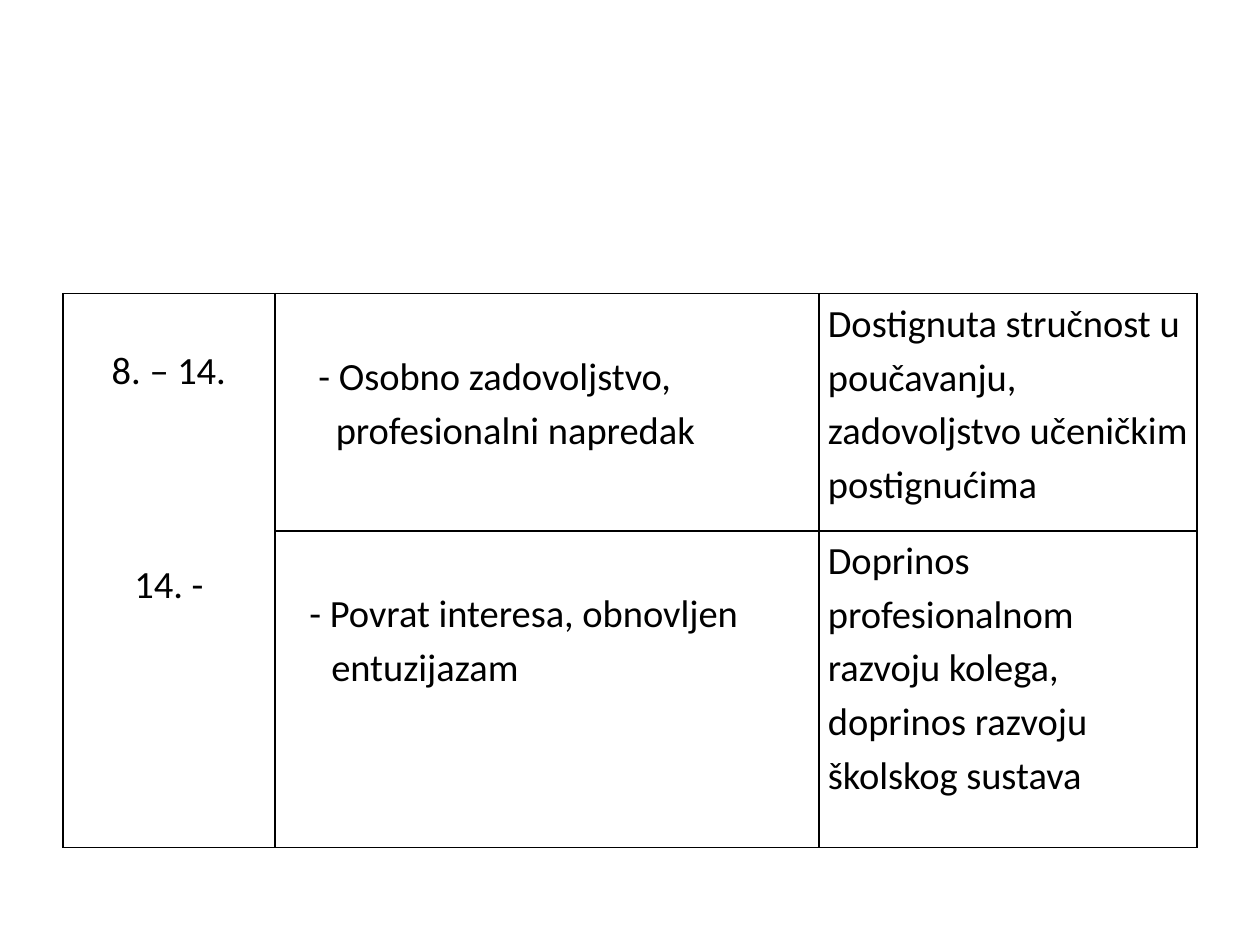
from dataclasses import dataclass

from lxml.etree import SubElement
from pptx import Presentation
from pptx.dml.color import RGBColor
from pptx.enum.text import PP_ALIGN
from pptx.oxml.ns import qn
from pptx.table import _Cell
from pptx.util import Cm, Pt

BLACK, WHITE = "000000", "FFFFFF"
COLUMN_WIDTHS = (4.27, 10.97, 7.62)
ROW_HEIGHTS = (4.78, 6.38)
LINE = 1.08  # height of one text line in cm


@dataclass
class Line:
    text: str
    left: float = 0
    hanging: float = 0
    before: float = 0


@dataclass
class Entry:
    row: int
    column: int
    lines: list[Line]
    top: float = 0
    align: PP_ALIGN = PP_ALIGN.LEFT


ENTRIES = [
    Entry(0, 0, [Line("8. – 14."), Line("14. -", before=3 * LINE)],
          top=0.95, align=PP_ALIGN.CENTER),
    Entry(0, 1, [Line("- Osobno zadovoljstvo,", left=0.7),
                 Line("profesionalni napredak", left=1.05)], top=LINE),
    Entry(0, 2, [Line("Dostignuta stručnost u poučavanju, "
                      "zadovoljstvo učeničkim postignućima")]),
    Entry(1, 1, [Line("- Povrat interesa, obnovljen entuzijazam",
                      left=0.96, hanging=0.44)], top=LINE),
    Entry(1, 2, [Line("Doprinos profesionalnom razvoju kolega,"),
                 Line("doprinos razvoju školskog sustava")]),
]


def color(value: str) -> RGBColor:
    return RGBColor.from_string(value)


def style_cell(cell: _Cell) -> None:
    """Give a cell thin black borders, a white fill and narrow margins."""
    properties = cell._tc.get_or_add_tcPr()
    for side in ("a:lnL", "a:lnR", "a:lnT", "a:lnB"):
        border = SubElement(properties, qn(side), w=str(Pt(1)))
        fill = SubElement(border, qn("a:solidFill"))
        SubElement(fill, qn("a:srgbClr"), val=BLACK)
    cell.fill.solid()
    cell.fill.fore_color.rgb = color(WHITE)
    cell.margin_left = cell.margin_right = Cm(0.18)
    cell.margin_top = cell.margin_bottom = 0


def write_entry(cell: _Cell, entry: Entry) -> None:
    cell.margin_top = Cm(entry.top)
    cell.text_frame.text = "\n".join(line.text for line in entry.lines)
    for para, line in zip(cell.text_frame.paragraphs, entry.lines):
        para.alignment = entry.align
        para.line_spacing = 1.15
        para.space_before = Cm(line.before)
        para_properties = para._p.get_or_add_pPr()
        para_properties.set("marL", str(Cm(line.left)))
        para_properties.set("indent", str(-Cm(line.hanging)))
        for span in para.runs:
            span.font.name = "Calibri"
            span.font.size = Pt(22)
            span.font.color.rgb = color(BLACK)


def main() -> None:
    deck = Presentation()
    deck.slide_width, deck.slide_height = Cm(25.4), Cm(19.05)
    page = deck.slides.add_slide(deck.slide_layouts[6])

    # Table of career stages
    frame = page.shapes.add_table(
        len(ROW_HEIGHTS), len(COLUMN_WIDTHS), Cm(1.27), Cm(5.92),
        Cm(sum(COLUMN_WIDTHS)), Cm(sum(ROW_HEIGHTS)))
    table = frame.table
    table.first_row = table.horz_banding = False
    for column, width in zip(table.columns, COLUMN_WIDTHS):
        column.width = Cm(width)
    for row, height in zip(table.rows, ROW_HEIGHTS):
        row.height = Cm(height)
    for cell in table.iter_cells():
        style_cell(cell)

    # The years share one tall cell
    table.cell(0, 0).merge(table.cell(1, 0))
    for entry in ENTRIES:
        write_entry(table.cell(entry.row, entry.column), entry)

    deck.save("out.pptx")


if __name__ == "__main__":
    main()
